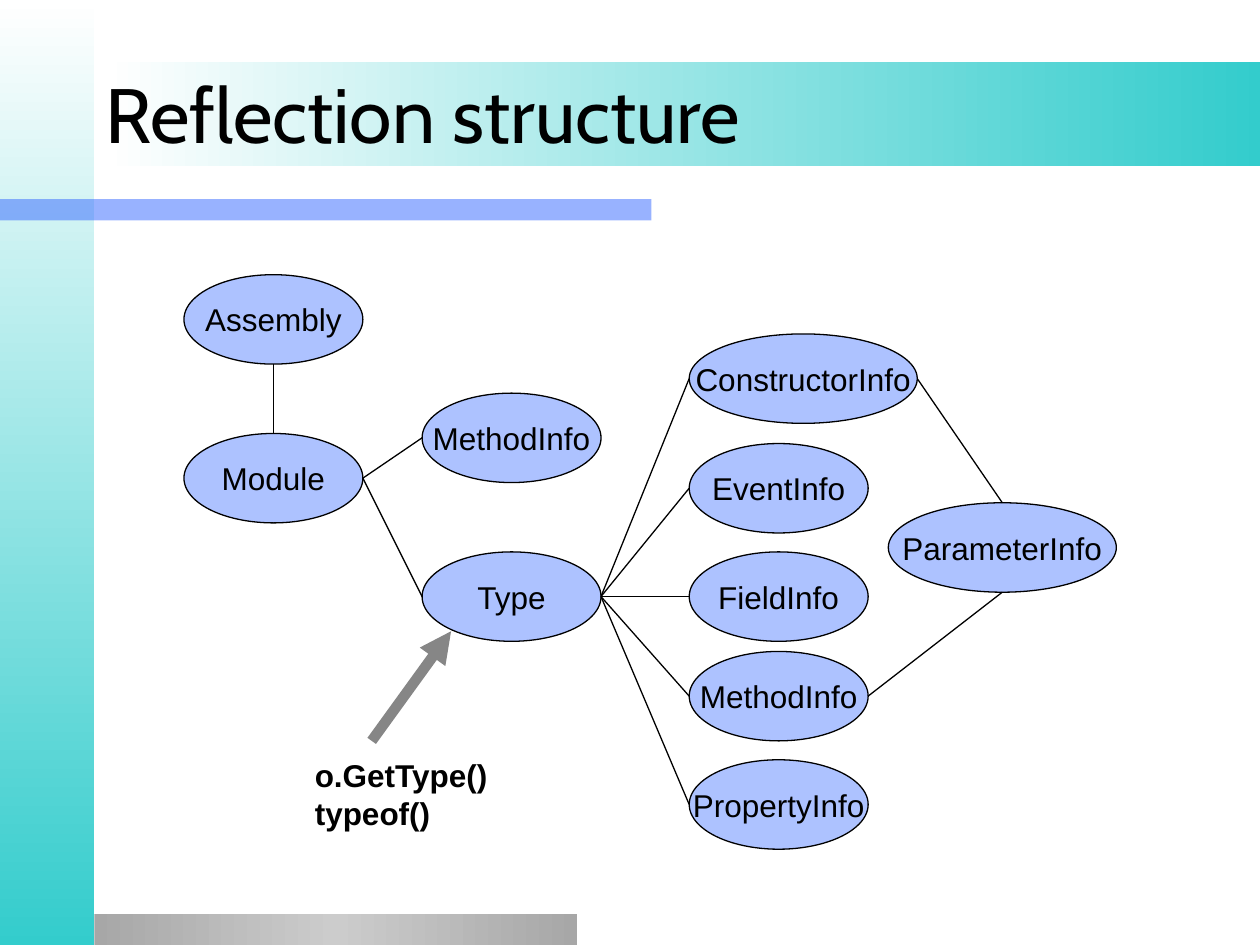
from lxml.etree import SubElement
from pptx import Presentation
from pptx.dml.color import RGBColor
from pptx.enum.shapes import MSO_CONNECTOR, MSO_SHAPE
from pptx.enum.text import MSO_ANCHOR, PP_ALIGN
from pptx.oxml.ns import qn
from pptx.util import Inches, Pt

COLORS = {
    "white": "FFFFFF", "teal": "33CCCC", "blue": "3366FF", "node": "ADC2FF",
    "gray": "A7A7A7", "silver": "CCCCCC", "arrow": "868686", "black": "000000",
}
NODE_H = 0.71
SMALL, WIDE = 1.42, 1.81

# key: (label, left, top, width)
NODES = {
    "assembly": ("Assembly", 1.46, 2.18, SMALL),
    "module": ("Module", 1.46, 3.44, SMALL),
    "global": ("MethodInfo", 3.35, 3.12, SMALL),
    "type": ("Type", 3.35, 4.38, SMALL),
    "constructor": ("ConstructorInfo", 5.47, 2.65, WIDE),
    "event": ("EventInfo", 5.47, 3.52, SMALL),
    "field": ("FieldInfo", 5.47, 4.38, SMALL),
    "method": ("MethodInfo", 5.47, 5.17, SMALL),
    "property": ("PropertyInfo", 5.47, 6.03, SMALL),
    "parameter": ("ParameterInfo", 7.05, 3.99, WIDE),
}
MEMBERS = ("constructor", "event", "field", "method", "property")
LINKS = [
    ("assembly", "bottom", "module", "top"),
    ("module", "right", "global", "left"),
    ("module", "right", "type", "left"),
    *[("type", "right", member, "left") for member in MEMBERS],
    ("constructor", "right", "parameter", "top"),
    ("method", "right", "parameter", "bottom"),
]
# side: share of the node's width and height
SIDES = {"top": (0.5, 0), "left": (0, 0.5), "bottom": (0.5, 1), "right": (1, 0.5)}


def color(name):
    return RGBColor.from_string(COLORS[name])


def add_shape(slide, kind, *box):
    shape = slide.shapes.add_shape(kind, *map(Inches, box))
    shape.shadow.inherit = False
    return shape


def add_bar(slide, box, name, alpha=None):
    bar = add_shape(slide, MSO_SHAPE.RECTANGLE, *box)
    bar.line.fill.background()
    bar.fill.solid()
    bar.fill.fore_color.rgb = color(name)
    if alpha is not None:
        tone = bar._element.spPr.find(".//" + qn("a:srgbClr"))
        SubElement(tone, qn("a:alpha"), val=str(alpha * 1000))


def add_fade(slide, box, names, angle=0):
    """Add a bar with evenly spaced gradient stops."""
    bar = add_shape(slide, MSO_SHAPE.RECTANGLE, *box)
    bar.line.fill.background()
    bar.fill.gradient()
    bar.fill.gradient_angle = angle
    stops = bar._element.spPr.find(".//" + qn("a:gsLst"))
    stops.clear()
    for i, name in enumerate(names):
        pos = 100000 * i // (len(names) - 1)
        stop = SubElement(stops, qn("a:gs"), pos=str(pos))
        SubElement(stop, qn("a:srgbClr"), val=COLORS[name])


def set_text(shape, text, size=18, font="Arial", bold=False, align=PP_ALIGN.LEFT,
             anchor=MSO_ANCHOR.TOP, wrap=False):
    frame = shape.text_frame
    frame.text = text
    frame.word_wrap = wrap
    frame.vertical_anchor = anchor
    for par in frame.paragraphs:
        par.alignment = align
        for run in par.runs:
            run.font.size = Pt(size)
            run.font.name = font
            run.font.bold = bold
            run.font.color.rgb = color("black")


def add_label(slide, box, text, **style):
    set_text(slide.shapes.add_textbox(*map(Inches, box)), text, **style)


def add_node(slide, label, left, top, width):
    node = add_shape(slide, MSO_SHAPE.OVAL, left, top, width, NODE_H)
    node.fill.solid()
    node.fill.fore_color.rgb = color("node")
    node.line.color.rgb = color("black")
    node.line.width = Pt(0.75)
    set_text(node, label, align=PP_ALIGN.CENTER, anchor=MSO_ANCHOR.MIDDLE)


def add_line(slide, start, end, name="black", width=0.75, arrow=False):
    line = slide.shapes.add_connector(
        MSO_CONNECTOR.STRAIGHT, *map(Inches, (*start, *end)))
    line.line.color.rgb = color(name)
    line.line.width = Pt(width)
    if arrow:
        SubElement(line.line._get_or_add_ln(), qn("a:tailEnd"), type="triangle")
    SubElement(line._element.spPr, qn("a:effectLst"))


def side_point(key, side):
    _, left, top, width = NODES[key]
    across, down = SIDES[side]
    return left + across * width, top + down * NODE_H


def main():
    prs = Presentation()
    prs.slide_width, prs.slide_height = Inches(10), Inches(7.5)
    slide = prs.slides.add_slide(prs.slide_layouts[6])

    add_fade(slide, (0, 0, 0.75, 7.5), ("white", "teal"), angle=270)
    add_bar(slide, (0, 1.58, 5.17, 0.17), "blue", alpha=50)
    add_fade(slide, (0.75, 7.25, 3.83, 0.25), ("gray", "silver", "gray"))
    add_fade(slide, (0.84, 0.49, 9.16, 0.83), ("white", "teal"))
    add_label(slide, (0.74, 0.27, 8.5, 1.25), "Reflection structure", size=44,
              font="Cabin", anchor=MSO_ANCHOR.MIDDLE, wrap=True)

    for node in NODES.values():
        add_node(slide, *node)
    for first, out, last, into in LINKS:
        add_line(slide, side_point(first, out), side_point(last, into))

    add_line(slide, (2.95, 5.88), (3.58, 5.01), "arrow", 6, arrow=True)
    add_label(slide, (2.4, 5.95, 1.59, 0.7), "o.GetType()\ntypeof()", bold=True)
    prs.save("out.pptx")


if __name__ == "__main__":
    main()
